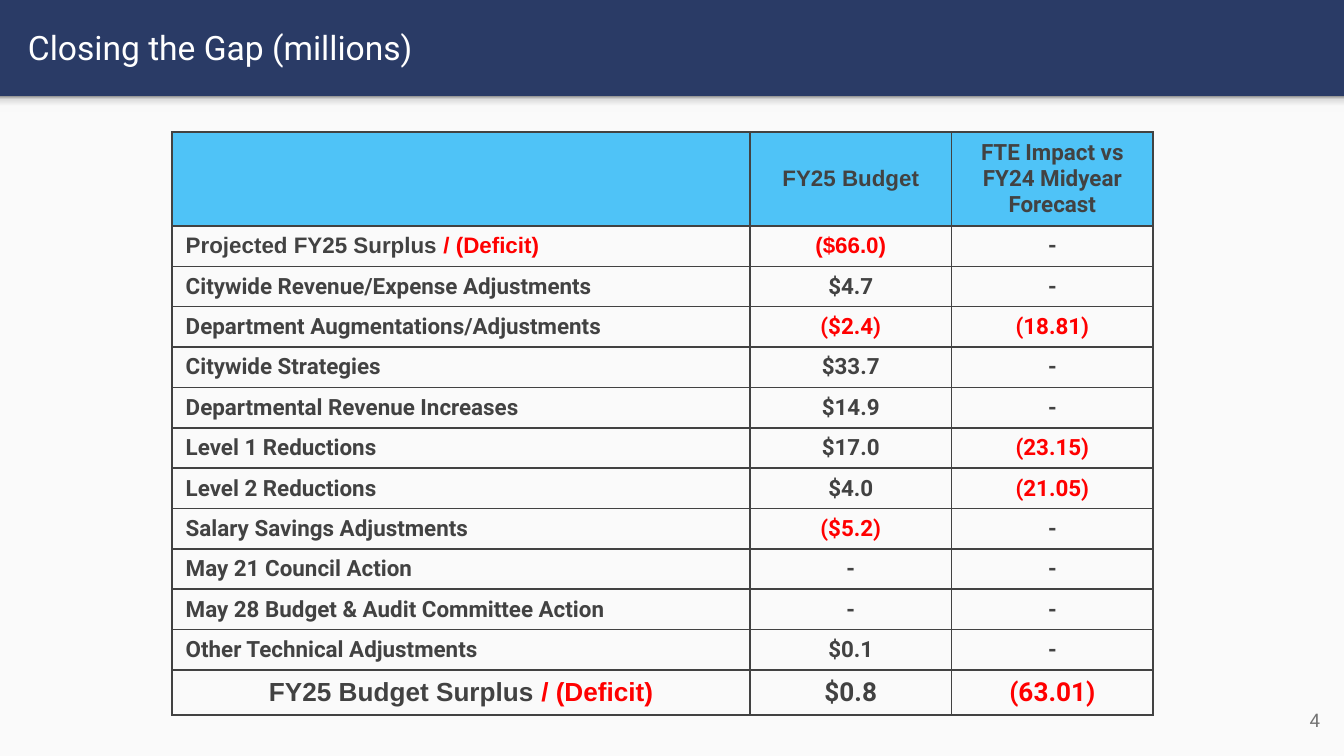
from lxml import etree
from pptx import Presentation
from pptx.dml.color import RGBColor
from pptx.enum.shapes import MSO_SHAPE
from pptx.enum.text import MSO_ANCHOR, PP_ALIGN
from pptx.oxml.ns import qn
from pptx.util import Pt

RECT = MSO_SHAPE.RECTANGLE
MIDDLE = MSO_ANCHOR.MIDDLE
LEFT, CENTER, RIGHT = PP_ALIGN.LEFT, PP_ALIGN.CENTER, PP_ALIGN.RIGHT

NAVY = RGBColor(0x2A, 0x3B, 0x66)
PAPER = RGBColor(0xFA, 0xFA, 0xFA)
WHITE = RGBColor(0xFF, 0xFF, 0xFF)
GRAY = RGBColor(0x73, 0x73, 0x73)
DARK = RGBColor(0x42, 0x42, 0x42)
RED = RGBColor(0xFF, 0x00, 0x00)
SKY = RGBColor(0x4F, 0xC3, 0xF7)

SHADOW_STOPS = [(0, "F9F9F9"), (36, "F9F9F9"), (80, "DEDEDE"), (100, "999999")]
DEFICIT = "/ (Deficit)"
COLUMN_WIDTHS = [309.5, 108, 108]
HEADER_HEIGHT, ROW_HEIGHT, TOTAL_HEIGHT = 49.4, 21.3, 23.8
ROWS = [
    ("", "FY25 Budget", "FTE Impact vs FY24 Midyear Forecast"),
    ("Projected FY25 Surplus / (Deficit)", "($66.0)", "-"),
    ("Citywide Revenue/Expense Adjustments", "$4.7", "-"),
    ("Department Augmentations/Adjustments", "($2.4)", "(18.81)"),
    ("Citywide Strategies", "$33.7", "-"),
    ("Departmental Revenue Increases", "$14.9", "-"),
    ("Level 1 Reductions", "$17.0", "(23.15)"),
    ("Level 2 Reductions", "$4.0", "(21.05)"),
    ("Salary Savings Adjustments", "($5.2)", "-"),
    ("May 21 Council Action", "-", "-"),
    ("May 28 Budget & Audit Committee Action", "-", "-"),
    ("Other Technical Adjustments", "$0.1", "-"),
    ("FY25 Budget Surplus / (Deficit)", "$0.8", "(63.01)"),
]
LAST = len(ROWS) - 1
ARIAL_CELLS = {(0, 1), (1, 0), (1, 1), (LAST, 0)}


class BudgetSlide:
    font = "Roboto"

    def __init__(self, prs):
        self.slide = prs.slides.add_slide(prs.slide_layouts[6])
        fill = self.slide.background.fill
        fill.solid()
        fill.fore_color.rgb = NAVY

    def rect(self, x, y, w, h):
        sp = self.slide.shapes.add_shape(RECT, Pt(x), Pt(y), Pt(w), Pt(h))
        sp.shadow.inherit = False
        sp.line.fill.background()
        return sp

    def panel(self, x, y, w, h, color):
        sp = self.rect(x, y, w, h)
        sp.fill.solid()
        sp.fill.fore_color.rgb = color

    def soft_edge(self, x, y, w, h):
        """Band that fades downwards from gray to the paper colour."""
        fill = self.rect(x, y, w, h).fill
        fill.gradient()
        fill.gradient_angle = 90
        stops = fill._fill._gradFill.find(qn("a:gsLst"))
        for stop in list(stops):
            stops.remove(stop)
        for percent, color in SHADOW_STOPS:
            stop = etree.SubElement(stops, qn("a:gs"), pos=str(percent * 1000))
            etree.SubElement(stop, qn("a:srgbClr"), val=color)

    def text(self, x, y, w, h, text, size, color, align=LEFT):
        tf = self.slide.shapes.add_textbox(Pt(x), Pt(y), Pt(w), Pt(h)).text_frame
        tf.word_wrap = True
        tf.vertical_anchor = MIDDLE
        tf.margin_left = tf.margin_right = tf.margin_top = tf.margin_bottom = Pt(7.2)
        p = tf.paragraphs[0]
        p.alignment = align
        p.add_run().text = text
        self.style(p.font, size, color)

    def style(self, font, size, color, name=None, bold=False):
        font.name = name or self.font
        font.size = Pt(size)
        font.bold = bold
        font.color.rgb = color

    def borders(self, cell):
        tcPr = cell._tc.get_or_add_tcPr()
        for i, side in enumerate(("lnL", "lnR", "lnT", "lnB")):
            ln = etree.Element(qn(f"a:{side}"), w=str(Pt(1)))
            fill = etree.SubElement(ln, qn("a:solidFill"))
            etree.SubElement(fill, qn("a:srgbClr"), val=str(DARK))
            tcPr.insert(i, ln)

    def cell(self, cell, row, col, text):
        cell.vertical_anchor = MIDDLE
        if row == 0:
            cell.fill.solid()
            cell.fill.fore_color.rgb = SKY
        else:
            cell.fill.background()
        self.borders(cell)
        p = cell.text_frame.paragraphs[0]
        p.alignment = LEFT if col == 0 and row < LAST else CENTER
        self.style(p.font, 14 if row == LAST else 12,
                   RED if text.startswith("(") else DARK,
                   "Arial" if (row, col) in ARIAL_CELLS else None, bold=True)
        label, deficit, _ = text.partition(DEFICIT)
        if label:
            p.add_run().text = label
        if deficit:
            r = p.add_run()
            r.text = deficit
            r.font.color.rgb = RED

    def table(self, x, y):
        heights = [HEADER_HEIGHT] + [ROW_HEIGHT] * (LAST - 1) + [TOTAL_HEIGHT]
        table = self.slide.shapes.add_table(
            len(ROWS), len(COLUMN_WIDTHS), Pt(x), Pt(y),
            Pt(sum(COLUMN_WIDTHS)), Pt(sum(heights))).table
        table.first_row = table.horz_banding = False
        for column, width in zip(table.columns, COLUMN_WIDTHS):
            column.width = Pt(width)
        for i, (height, values) in enumerate(zip(heights, ROWS)):
            table.rows[i].height = Pt(height)
            for j, value in enumerate(values):
                self.cell(table.cell(i, j), i, j, value)


def main():
    prs = Presentation()
    prs.slide_width, prs.slide_height = Pt(720), Pt(405)
    s = BudgetSlide(prs)
    s.panel(0, 51.6, 720, 353.4, PAPER)
    s.soft_edge(0, 51.6, 720, 8.6)
    s.text(7.9, 1.6, 695, 47.5, "Closing the Gap (millions)", 18, WHITE)
    s.text(671, 370, 43.2, 31, "4", 10, GRAY, RIGHT)
    s.table(92.3, 70.6)
    prs.save("out.pptx")


if __name__ == "__main__":
    main()
